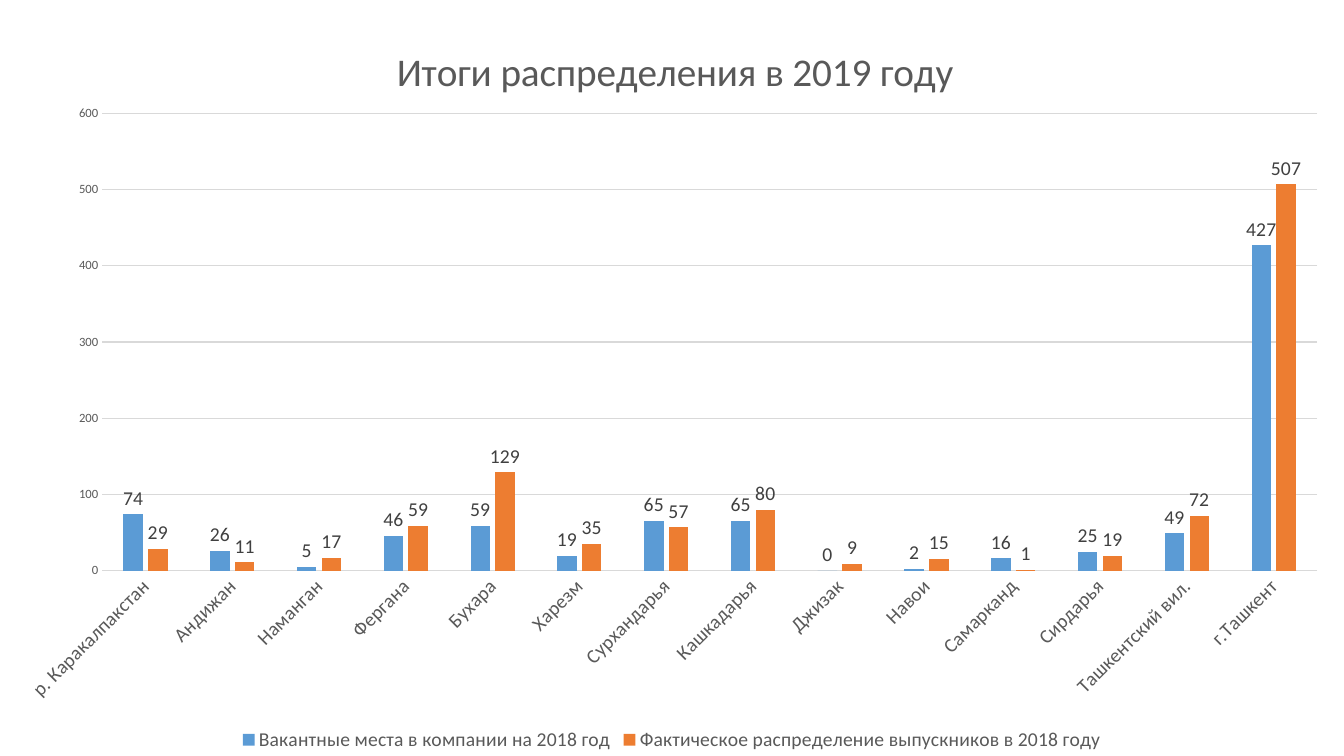
from lxml import etree
from pptx import Presentation
from pptx import util as u
from pptx.chart import data as chart_data
from pptx.dml.color import RGBColor
from pptx.enum import chart as ce
from pptx.oxml import ns

BLUE = RGBColor(0x5B, 0x9B, 0xD5)
ORANGE = RGBColor(0xED, 0x7D, 0x31)
GREY = RGBColor(0x59, 0x59, 0x59)
DARK = RGBColor(0x40, 0x40, 0x40)
PALE = RGBColor(0xD9, 0xD9, 0xD9)

REGIONS = [
    ("р. Каракалпакстан", 74, 29),
    ("Андижан", 26, 11),
    ("Наманган", 5, 17),
    ("Фергана", 46, 59),
    ("Бухара", 59, 129),
    ("Харезм", 19, 35),
    ("Сурхандарья", 65, 57),
    ("Кашкадарья", 65, 80),
    ("Джизак", 0, 9),
    ("Навои", 2, 15),
    ("Самарканд", 16, 1),
    ("Сирдарья", 25, 19),
    ("Ташкентский вил.", 49, 72),
    ("г.Ташкент", 427, 507),
]


class ChartSlide:
    font_name = "Calibri"

    def __init__(self, slide):
        self.slide = slide

    def style_font(self, font, size, color):
        font.name = self.font_name
        font.size = u.Pt(size)
        font.bold = False
        font.color.rgb = color

    def style_line(self, line):
        line.color.rgb = PALE
        line.width = u.Pt(0.75)

    def place(self, part, index, **settings):
        for old in part.findall(ns.qn("c:layout")):
            part.remove(old)
        layout = etree.Element(ns.qn("c:layout"))
        manual = etree.SubElement(layout, ns.qn("c:manualLayout"))
        for tag, value in settings.items():
            etree.SubElement(manual, ns.qn(f"c:{tag}")).set("val", str(value))
        part.insert(index, layout)

    def columns(self, left, top, width, height, names):
        results = chart_data.CategoryChartData()
        regions, *counts = zip(*REGIONS)
        results.categories = regions
        for name, values in zip(names, counts):
            results.add_series(name, values)
        chart = self.slide.shapes.add_chart(
            ce.XL_CHART_TYPE.COLUMN_CLUSTERED,
            u.Pt(left), u.Pt(top), u.Pt(width), u.Pt(height), results,
        ).chart
        chart.font.name = self.font_name
        chart.font.size = u.Pt(10)
        return chart

    def title(self, chart, wording):
        chart.has_title = True
        heading = chart.chart_title.text_frame.paragraphs[0].add_run()
        heading.text = wording
        self.style_font(heading.font, 28, GREY)
        self.place(chart.element.xpath("c:chart/c:title")[0], 1,
                   xMode="edge", yMode="edge", x=0.29, y=0.05)

    def bars(self, chart, colors):
        plot = chart.plots[0]
        plot.gap_width = 219
        plot.overlap = -27
        plot.vary_by_categories = False
        for series, color in zip(plot.series, colors):
            series.format.fill.solid()
            series.format.fill.fore_color.rgb = color
            series.invert_if_negative = False
            labels = series.data_labels
            labels.show_value = True
            labels.position = ce.XL_LABEL_POSITION.OUTSIDE_END
            self.style_font(labels.font, 14, DARK)
        self.place(chart.element.xpath("c:chart/c:plotArea")[0], 0,
                   layoutTarget="inner", xMode="edge", yMode="edge",
                   x=0.076, y=0.15, w=0.904, h=0.605)

    def axes(self, chart):
        for axis, size in ((chart.category_axis, 14), (chart.value_axis, 9)):
            axis.major_tick_mark = ce.XL_TICK_MARK.NONE
            axis.minor_tick_mark = ce.XL_TICK_MARK.NONE
            self.style_font(axis.tick_labels.font, size, GREY)
        self.style_line(chart.category_axis.format.line)
        chart.element.xpath("//c:catAx/c:txPr/a:bodyPr")[0].set("rot", "-2700000")
        counts = chart.value_axis
        counts.minimum_scale = 0
        counts.maximum_scale = 600
        counts.major_unit = 100
        counts.format.line.fill.background()
        counts.has_major_gridlines = True
        self.style_line(counts.major_gridlines.format.line)

    def legend(self, chart):
        chart.has_legend = True
        chart.legend.position = ce.XL_LEGEND_POSITION.BOTTOM
        chart.legend.include_in_layout = False
        self.style_font(chart.legend.font, 14, GREY)


def main():
    deck = Presentation()
    deck.slide_width, deck.slide_height = u.Pt(960), u.Pt(540)
    page = ChartSlide(deck.slides.add_slide(deck.slide_layouts[6]))
    allocation = page.columns(0, 0, 960, 540, [
        "Вакантные места в компании на 2018 год",
        "Фактическое распределение выпускников в 2018 году",
    ])
    page.title(allocation, "Итоги распределения в 2019 году")
    page.bars(allocation, (BLUE, ORANGE))
    page.axes(allocation)
    page.legend(allocation)
    deck.save("out.pptx")


if __name__ == "__main__":
    main()
